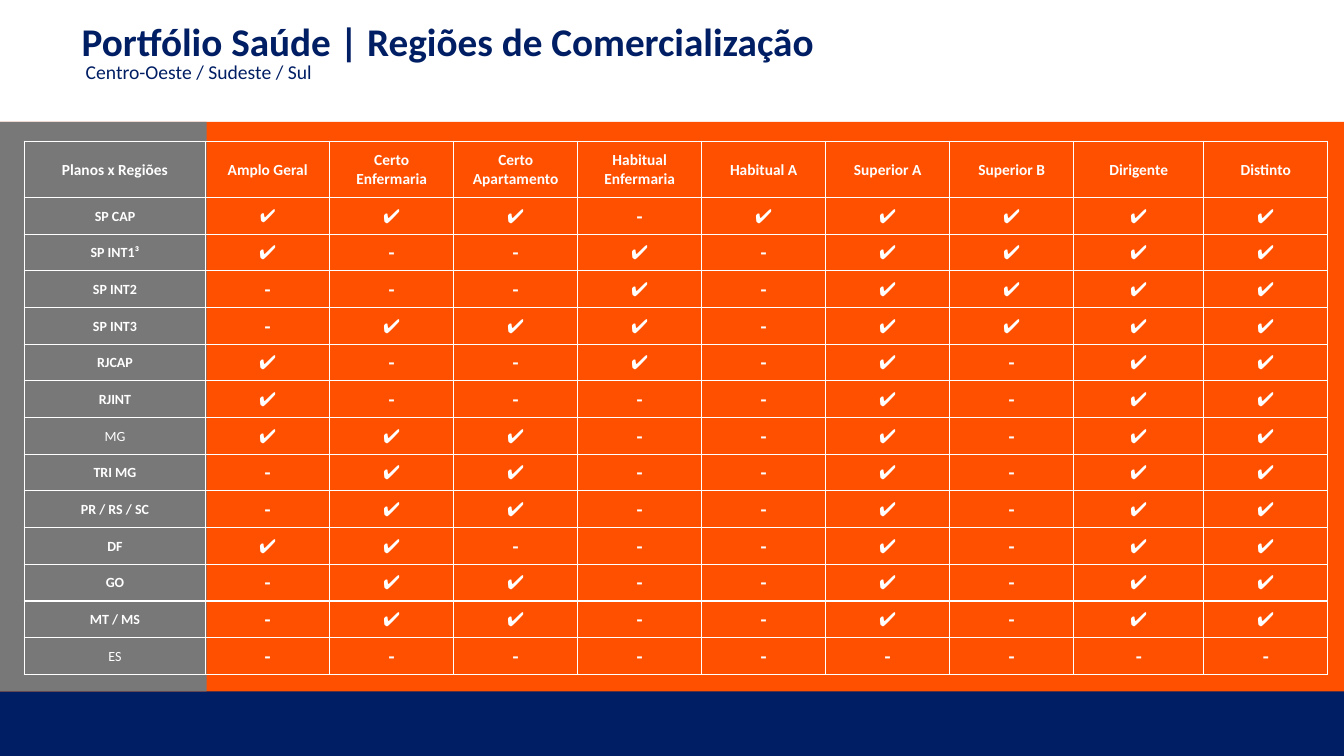
from lxml import etree
from pptx import Presentation
from pptx.dml.color import RGBColor
from pptx.enum.shapes import MSO_SHAPE
from pptx.enum.text import MSO_ANCHOR, MSO_AUTO_SIZE, PP_ALIGN
from pptx.oxml.ns import qn
from pptx.util import Inches, Pt

NAVY = RGBColor(0x00, 0x1E, 0x64)
ORANGE = RGBColor(0xFF, 0x50, 0x00)
GREY = RGBColor(0x78, 0x78, 0x78)
WHITE = RGBColor(0xFF, 0xFF, 0xFF)
RECTANGLE = MSO_SHAPE.RECTANGLE
TOP, MIDDLE = MSO_ANCHOR.TOP, MSO_ANCHOR.MIDDLE
LEFT, CENTER = PP_ALIGN.LEFT, PP_ALIGN.CENTER
FONT = "Calibri"
TITLE_ONLY = 5

# Content
TITLE = "Portfólio Saúde | Regiões de Comercialização"
SUBTITLE = "Centro-Oeste / Sudeste / Sul"
HEADER = [
    "Planos x Regiões", "Amplo Geral", "Certo\nEnfermaria",
    "Certo\nApartamento", "Habitual\nEnfermaria", "Habitual A",
    "Superior A", "Superior B", "Dirigente", "Distinto",
]
REGIONS = [  # region, one mark per plan
    ("SP CAP", "✔✔✔-✔✔✔✔✔"),
    ("SP INT1³", "✔--✔-✔✔✔✔"),
    ("SP INT2", "---✔-✔✔✔✔"),
    ("SP INT3", "-✔✔✔-✔✔✔✔"),
    ("RJCAP", "✔--✔-✔-✔✔"),
    ("RJINT", "✔----✔-✔✔"),
    ("MG", "✔✔✔--✔-✔✔"),
    ("TRI MG", "-✔✔--✔-✔✔"),
    ("PR / RS / SC", "-✔✔--✔-✔✔"),
    ("DF", "✔✔---✔-✔✔"),
    ("GO", "-✔✔--✔-✔✔"),
    ("MT / MS", "-✔✔--✔-✔✔"),
    ("ES", "---------"),
]
REGULAR_REGIONS = {"MG", "ES"}
BANDS = [  # left, top, width, height, colour
    (-0.02, 4.54, 13.35, 2.96, NAVY),
    (0, 1.21, 13.33, 5.65, ORANGE),
    (-0.02, 1.21, 2.07, 5.65, GREY),
]

# Table measures
TABLE_BOX = (0.24, 1.4, 12.91, 5.29)
COLUMN_WIDTHS = [1.8] + [1.23] * 7 + [1.29, 1.23]
HEADER_HEIGHT = 0.56
ROW_HEIGHT = (TABLE_BOX[3] - HEADER_HEIGHT) / len(REGIONS)


def inches(values):
    return [Inches(value) for value in values]


def write(frame, text, size, color, bold, align):
    para = frame.paragraphs[0]
    para.alignment = align
    for index, line in enumerate(text.split("\n")):
        if index:
            para.add_line_break()
        span = para.add_run()
        span.text = line
        span.font.name = FONT
        span.font.size = Pt(size)
        span.font.bold = bold
        span.font.color.rgb = color


def set_heading(shape, box, text, size, bold):
    shape.left, shape.top, shape.width, shape.height = inches(box)
    frame = shape.text_frame
    frame.word_wrap = True
    frame.auto_size = MSO_AUTO_SIZE.NONE
    frame.vertical_anchor = TOP
    frame.margin_left = frame.margin_right = Inches(0.07)
    frame.margin_top = frame.margin_bottom = Inches(0.04)
    write(frame, text, size, NAVY, bold, LEFT)


def set_borders(cell):
    properties = cell._tc.get_or_add_tcPr()
    for index, side in enumerate(("a:lnL", "a:lnR", "a:lnT", "a:lnB")):
        line = etree.Element(qn(side), w=str(Pt(1)))
        fill = etree.SubElement(line, qn("a:solidFill"))
        etree.SubElement(fill, qn("a:srgbClr"), val=str(WHITE))
        properties.insert(index, line)


def set_cell(cell, text, size, bold=True):
    cell.fill.background()
    cell.vertical_anchor = MIDDLE
    cell.margin_left = cell.margin_right = cell.margin_top = Inches(0.01)
    cell.margin_bottom = 0
    write(cell.text_frame, text, size, WHITE, bold, CENTER)
    set_borders(cell)


deck = Presentation()
deck.slide_width, deck.slide_height = Inches(13.33), Inches(7.5)
page = deck.slides.add_slide(deck.slide_layouts[TITLE_ONLY])

# Background bands
for *box, color in BANDS:
    band = page.shapes.add_shape(RECTANGLE, *inches(box))
    band.shadow.inherit = False
    band.fill.solid()
    band.fill.fore_color.rgb = color
    band.line.fill.background()

# Table of plans by region
table = page.shapes.add_table(
    len(REGIONS) + 1, len(HEADER), *inches(TABLE_BOX)).table
table.first_row = table.horz_banding = False
for column, width in zip(table.columns, COLUMN_WIDTHS):
    column.width = Inches(width)
for index, row in enumerate(table.rows):
    row.height = Inches(ROW_HEIGHT if index else HEADER_HEIGHT)

for cell, plan in zip(table.rows[0].cells, HEADER):
    set_cell(cell, plan, 11)
for row_index, (region, marks) in enumerate(REGIONS, 1):
    set_cell(table.cell(row_index, 0), region, 10, region not in REGULAR_REGIONS)
    for column_index, mark in enumerate(marks, 1):
        first_mark = row_index == column_index == 1
        set_cell(table.cell(row_index, column_index), mark, 13 if first_mark else 14)

# Title and subtitle
set_heading(page.shapes.title, (0.74, 0.13, 7.68, 0.47), TITLE, 28, True)
subtitle_box = (0.78, 0.55, 2.86, 0.26)
subtitle = page.shapes.add_textbox(*inches(subtitle_box))
set_heading(subtitle, subtitle_box, SUBTITLE, 14, False)

deck.save("out.pptx")
